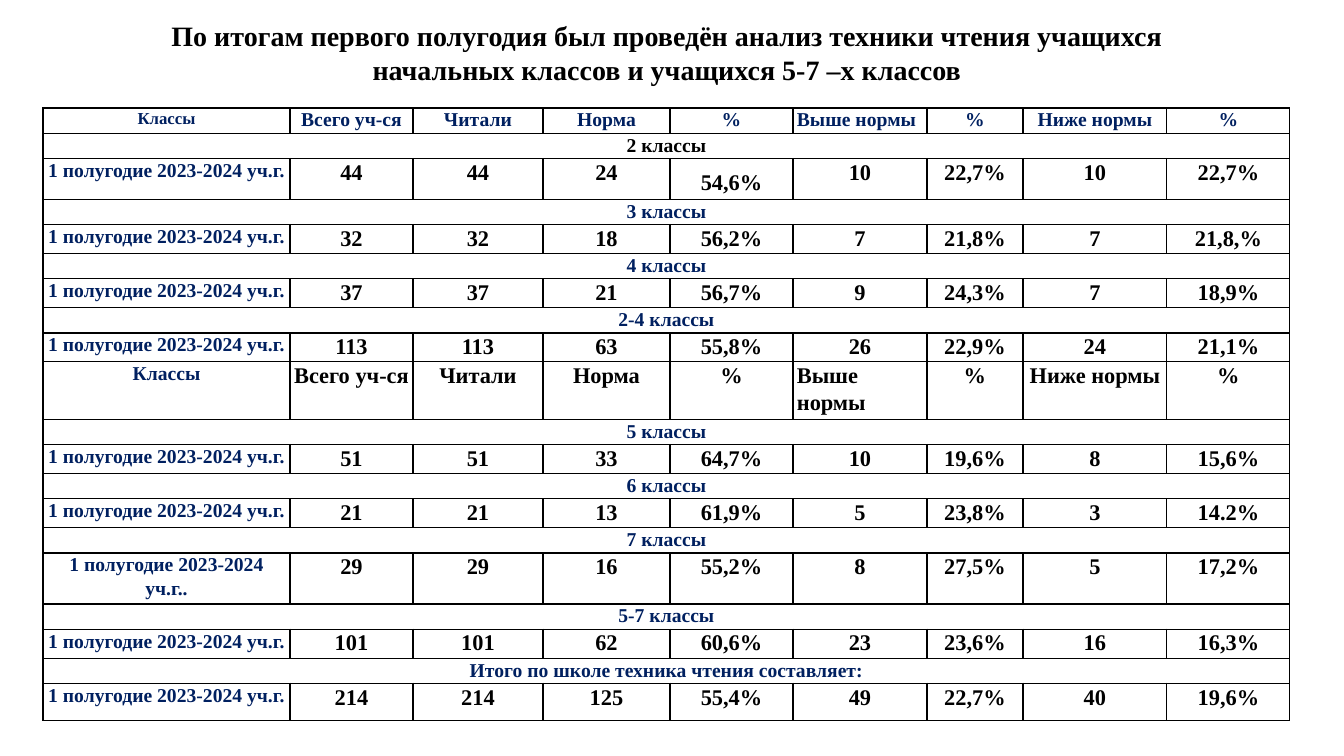
from lxml.etree import SubElement
from pptx import Presentation
from pptx.dml.color import RGBColor
from pptx.enum.text import PP_ALIGN
from pptx.oxml.ns import qn
from pptx.util import Pt

TITLE = [
    "По итогам первого полугодия был проведён анализ техники чтения учащихся",
    "начальных классов и учащихся 5-7 –х классов",
]
HEADINGS = ["Классы", "Всего уч-ся", "Читали", "Норма", "%", "Выше нормы", "%", "Ниже нормы", "%"]
TERM = "1 полугодие 2023-2024 уч.г."
ROWS = [
    (25, HEADINGS),
    (25, ["2 классы"]),
    (41, [TERM, "44", "44", "24", "54,6%", "10", "22,7%", "10", "22,7%"]),
    (25, ["3 классы"]),
    (29, [TERM, "32", "32", "18", "56,2%", "7", "21,8%", "7", "21,8,%"]),
    (25, ["4 классы"]),
    (29, [TERM, "37", "37", "21", "56,7%", "9", "24,3%", "7", "18,9%"]),
    (25, ["2-4 классы"]),
    (29, [TERM, "113", "113", "63", "55,8%", "26", "22,9%", "24", "21,1%"]),
    (57, HEADINGS),
    (25, ["5 классы"]),
    (29, [TERM, "51", "51", "33", "64,7%", "10", "19,6%", "8", "15,6%"]),
    (25, ["6 классы"]),
    (29, [TERM, "21", "21", "13", "61,9%", "5", "23,8%", "3", "14.2%"]),
    (25, ["7 классы"]),
    (51, [TERM + ".", "29", "29", "16", "55,2%", "8", "27,5%", "5", "17,2%"]),
    (25, ["5-7 классы"]),
    (29, [TERM, "101", "101", "62", "60,6%", "23", "23,6%", "16", "16,3%"]),
    (25, ["Итого по школе техника чтения составляет:"]),
    (37, [TERM, "214", "214", "125", "55,4%", "49", "22,7%", "40", "19,6%"]),
]
COLUMN_WIDTHS = [247, 123, 130, 127, 123, 134, 96, 144, 123]
LINE_SPACING = 1.07
TALL_LINE = {(2, 4): 1.5}

BLACK = RGBColor(0, 0, 0)
NAVY = RGBColor(0, 0x20, 0x60)
CELL_FORMAT = {"margin_left": 4, "margin_right": 4, "margin_top": 0, "margin_bottom": 0}


def px(length):
    return round(length * 914400 / 100.8)


def write(paragraph, text, size, color, align=PP_ALIGN.CENTER):
    paragraph.text = text
    paragraph.alignment = align
    font = paragraph.runs[0].font
    for key, value in {"name": "Times New Roman", "size": Pt(size), "bold": True}.items():
        setattr(font, key, value)
    font.color.rgb = color


def cell_style(row, column):
    if row == 0:
        return (12 if column == 0 else 14), NAVY
    if column == 0:
        return 14, BLACK if row == 1 else NAVY
    return 16, BLACK


def add_borders(cell):
    properties = cell._tc.get_or_add_tcPr()
    for position, side in enumerate(("a:lnL", "a:lnR", "a:lnT", "a:lnB")):
        line = properties.makeelement(qn(side), {"w": str(Pt(1))})
        properties.insert(position, line)
        fill = SubElement(line, qn("a:solidFill"))
        SubElement(fill, qn("a:srgbClr"), val=str(BLACK))


def main():
    deck = Presentation()
    deck.slide_width, deck.slide_height = px(1344), px(756)
    slide = deck.slides.add_slide(deck.slide_layouts[6])

    title = slide.shapes.add_textbox(px(53), px(14), px(1228), px(78)).text_frame
    title.word_wrap = True
    for index, line in enumerate(TITLE):
        paragraph = title.add_paragraph() if index else title.paragraphs[0]
        write(paragraph, line, 20, BLACK)

    results = slide.shapes.add_table(
        len(ROWS), len(COLUMN_WIDTHS), px(43), px(108),
        px(sum(COLUMN_WIDTHS)), px(sum(height for height, _ in ROWS)),
    ).table
    results.first_row = results.horz_banding = False
    for column, width in zip(results.columns, COLUMN_WIDTHS):
        column.width = px(width)

    for row, (height, texts) in enumerate(ROWS):
        results.rows[row].height = px(height)
        if len(texts) == 1:
            results.cell(row, 0).merge(results.cell(row, len(COLUMN_WIDTHS) - 1))
        for column in range(len(COLUMN_WIDTHS)):
            cell = results.cell(row, column)
            for key, value in CELL_FORMAT.items():
                setattr(cell, key, px(value))
            cell.fill.background()
            add_borders(cell)
            if column < len(texts):
                text = texts[column]
                align = PP_ALIGN.JUSTIFY if text == "Выше нормы" else PP_ALIGN.CENTER
                paragraph = cell.text_frame.paragraphs[0]
                write(paragraph, text, *cell_style(row, column), align)
                paragraph.line_spacing = TALL_LINE.get((row, column), LINE_SPACING)

    deck.save("out.pptx")


if __name__ == "__main__":
    main()
